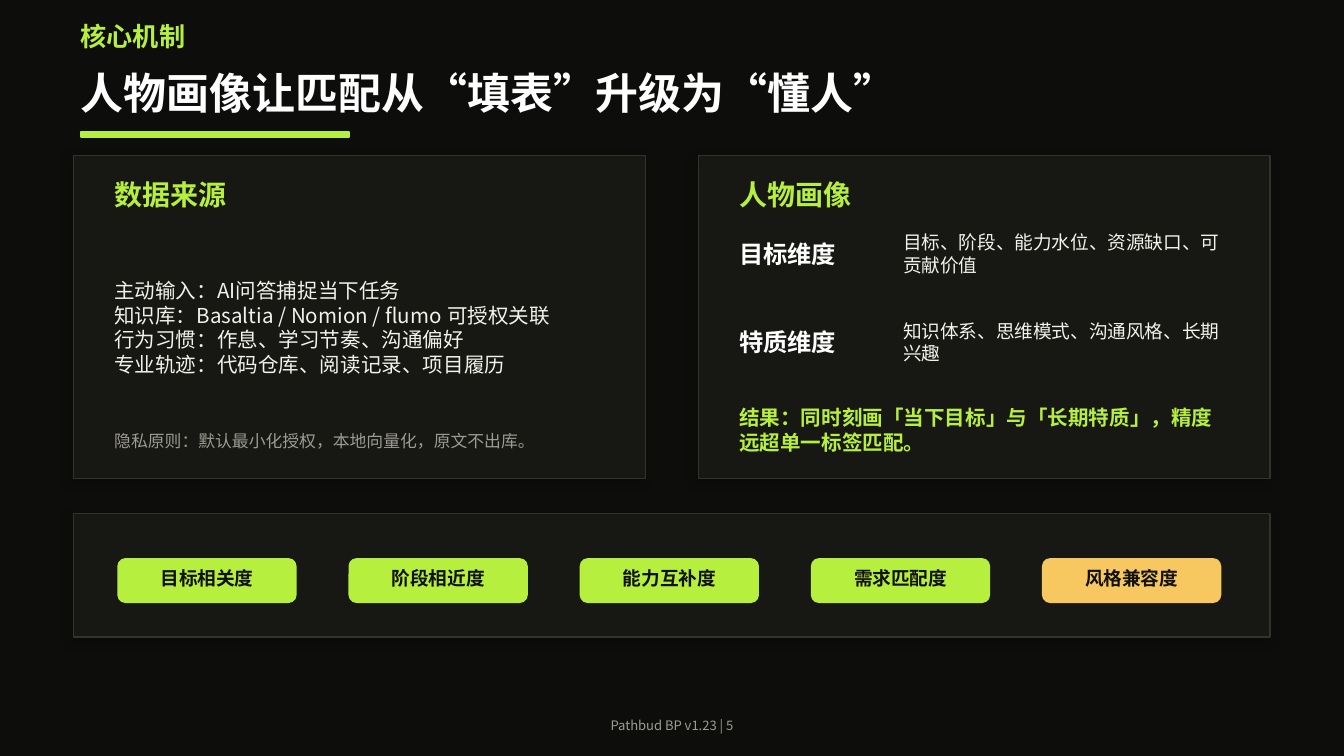
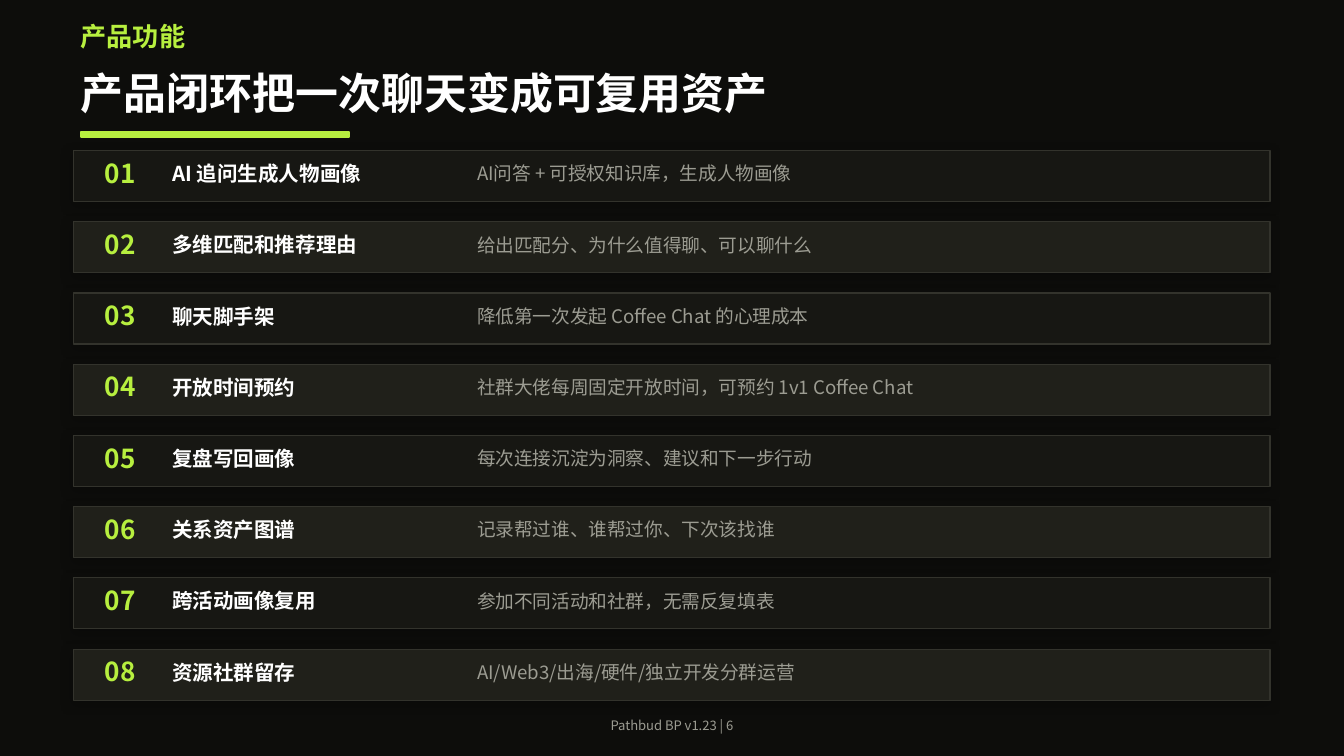
from collections import namedtuple

from lxml import etree
from pptx import Presentation
from pptx import util as u
from pptx.dml import color
from pptx.enum import shapes, text
from pptx.oxml import ns

FONT = "Noto Sans CJK SC"
COLORS = {
    "background": "0D0D0B",
    "panel": "171713",
    "panel_alternate": "20201A",
    "border": "33332C",
    "lime": "B7EF3F",
    "amber": "F6C85F",
    "white": "FFFFFF",
    "body": "F2F2EC",
    "muted": "9C9C92",
    "dark": "111111",
}
Box = namedtuple("Box", "left top width height")
HEADER = Box(0.6, 0.14, 8.8, 0.88)
FOOTER = Box(0.6, 5.32, 8.8, 0.16)

SOURCES = [
    "主动输入：AI问答捕捉当下任务",
    "知识库：Basaltia / Nomion / flumo 可授权关联",
    "行为习惯：作息、学习节奏、沟通偏好",
    "专业轨迹：代码仓库、阅读记录、项目履历",
]
DIMENSIONS = [
    ("目标维度", "目标、阶段、能力水位、资源缺口、可贡献价值"),
    ("特质维度", "知识体系、思维模式、沟通风格、长期兴趣"),
]
SCORES = [
    ("目标相关度", "lime"),
    ("阶段相近度", "lime"),
    ("能力互补度", "lime"),
    ("需求匹配度", "lime"),
    ("风格兼容度", "amber"),
]
FEATURES = [
    ("AI 追问生成人物画像", "AI问答 + 可授权知识库，生成人物画像"),
    ("多维匹配和推荐理由", "给出匹配分、为什么值得聊、可以聊什么"),
    ("聊天脚手架", "降低第一次发起 Coffee Chat 的心理成本"),
    ("开放时间预约", "社群大佬每周固定开放时间，可预约 1v1 Coffee Chat"),
    ("复盘写回画像", "每次连接沉淀为洞察、建议和下一步行动"),
    ("关系资产图谱", "记录帮过谁、谁帮过你、下次该找谁"),
    ("跨活动画像复用", "参加不同活动和社群，无需反复填表"),
    ("资源社群留存", "AI/Web3/出海/硬件/独立开发分群运营"),
]


def rgb(name):
    """Return the named colour."""
    return color.RGBColor.from_string(COLORS[name])


def within(box, left, top, width, height):
    """Return a box placed relative to the corner of another."""
    return Box(round(box.left + left, 2), round(box.top + top, 2), width, height)


def inches(box):
    """Return the four lengths of a box."""
    return [u.Inches(value) for value in box]


def write(shape, content, size, ink, bold=False, align=text.PP_ALIGN.LEFT):
    """Fill a shape with evenly styled text, one paragraph a line."""
    frame = shape.text_frame
    frame.text = content
    frame.word_wrap = True
    frame.auto_size = text.MSO_AUTO_SIZE.NONE
    frame.vertical_anchor = text.MSO_ANCHOR.MIDDLE
    frame.margin_left = frame.margin_right = 0
    frame.margin_top = frame.margin_bottom = 0
    for paragraph in frame.paragraphs:
        paragraph.alignment = align
        if shape.is_placeholder:
            paragraph.space_before = u.Pt(0)
            properties = paragraph._p.get_or_add_pPr()
            properties.set("marL", "0")
            properties.set("indent", "0")
            etree.SubElement(properties, ns.qn("a:buNone"))
        for run in paragraph.runs:
            run.font.size = u.Pt(size)
            run.font.bold = bold
            run.font.color.rgb = rgb(ink)
            run.font.name = FONT
            etree.SubElement(run.font._element, ns.qn("a:ea"), typeface=FONT)


def add_text(slide, box, content, size, ink, **style):
    """Add a text box."""
    write(slide.shapes.add_textbox(*inches(box)), content, size, ink, **style)


def fill_placeholder(placeholder, box, content, size, ink, **style):
    """Move a placeholder and fill it with text."""
    placeholder.left, placeholder.top, placeholder.width, placeholder.height = inches(box)
    write(placeholder, content, size, ink, **style)


def add_block(slide, box, fill, line, width=1, kind=shapes.MSO_SHAPE.RECTANGLE):
    """Add a filled, outlined shape without a shadow."""
    shape = slide.shapes.add_shape(kind, *inches(box))
    shape.shadow.inherit = False
    shape.fill.solid()
    shape.fill.fore_color.rgb = rgb(fill)
    shape.line.color.rgb = rgb(line)
    shape.line.width = u.Pt(width)
    return shape


def add_panel(slide, box, fill="panel"):
    """Add a bordered panel with a soft shadow."""
    panel = add_block(slide, box, fill, "border", 0.6)
    effects = panel._element.spPr.find(ns.qn("a:effectLst"))
    shadow = etree.SubElement(
        effects, ns.qn("a:outerShdw"),
        blurRad=str(u.Pt(6)), dist=str(u.Pt(2)), dir=str(135 * 60000),
        algn="bl", rotWithShape="0",
    )
    shade = etree.SubElement(shadow, ns.qn("a:srgbClr"), val="000000")
    etree.SubElement(shade, ns.qn("a:alpha"), val="20000")


def add_header(slide, box, section, title):
    """Add the section label, the title and its underline."""
    add_text(slide, within(box, 0, 0, box.width, 0.26), section, 14, "lime", bold=True)
    fill_placeholder(slide.shapes.title, within(box, 0, 0.26, box.width, 0.58),
                     title, 23, "white", bold=True)
    add_block(slide, within(box, 0, 0.84, 2, 0.04), "lime", "lime")


def add_footer(slide, box, number):
    """Add the centred footer line."""
    add_text(slide, box, f"Pathbud BP v1.23 | {number}", 7, "muted",
             align=text.PP_ALIGN.CENTER)


def add_card(slide, box, heading):
    """Add a panel with a heading."""
    add_panel(slide, box)
    add_text(slide, within(box, 0.3, 0.16, 3.5, 0.25), heading, 15, "lime", bold=True)


def add_sources(slide, box):
    """Add the card of data sources."""
    add_card(slide, box, "数据来源")
    body = slide.placeholders[1]
    fill_placeholder(body, within(box, 0.3, 0.6, 3.55, 1.35), "\n".join(SOURCES), 11, "body")
    slide.shapes._spTree.append(body._element)
    add_text(slide, within(box, 0.3, 2.01, 3.55, 0.22),
             "隐私原则：默认最小化授权，本地向量化，原文不出库。", 9, "muted")


def add_profile(slide, box):
    """Add the card of profile dimensions."""
    add_card(slide, box, "人物画像")
    for index, (name, details) in enumerate(DIMENSIONS):
        top = 0.6 + 0.66 * index
        add_text(slide, within(box, 0.3, top, 1.2, 0.25), name, 13, "white", bold=True)
        add_text(slide, within(box, 1.52, top, 2.4, 0.25), details, 10, "body")
    add_text(slide, within(box, 0.3, 1.9, 3.55, 0.28),
             "结果：同时刻画「当下目标」与「长期特质」，精度远超单一标签匹配。",
             11, "lime", bold=True)


def add_scores(slide, box):
    """Add the panel with a row of score chips."""
    add_panel(slide, box)
    for index, (label, fill) in enumerate(SCORES):
        chip = within(box, 0.33 + 1.72 * index, 0.34, 1.32, 0.32)
        add_block(slide, chip, fill, fill, kind=shapes.MSO_SHAPE.ROUNDED_RECTANGLE)
        add_text(slide, within(chip, 0, 0.04, chip.width, 0.2), label, 10, "dark",
                 bold=True, align=text.PP_ALIGN.CENTER)


def add_feature(slide, box, number, name, details):
    """Add one numbered feature row."""
    add_panel(slide, box, "panel" if number % 2 else "panel_alternate")
    add_text(slide, within(box, 0.23, 0.04, 0.42, 0.25), f"{number:02}", 14, "lime", bold=True)
    add_text(slide, within(box, 0.73, 0.06, 2.15, 0.22), name, 11, "white", bold=True)
    add_text(slide, within(box, 3, 0.06, 5.55, 0.22), details, 10, "muted")


def build_mechanism(presentation):
    """Build the slide on the core mechanism."""
    slide = presentation.slides.add_slide(presentation.slide_layouts[1])
    add_header(slide, HEADER, "核心机制", "人物画像让匹配从“填表”升级为“懂人”")
    add_sources(slide, Box(0.55, 1.16, 4.25, 2.4))
    add_profile(slide, Box(5.2, 1.16, 4.25, 2.4))
    add_scores(slide, Box(0.55, 3.82, 8.9, 0.92))
    add_footer(slide, FOOTER, 5)


def build_features(presentation):
    """Build the slide on product features."""
    slide = presentation.slides.add_slide(presentation.slide_layouts[5])
    add_header(slide, HEADER, "产品功能", "产品闭环把一次聊天变成可复用资产")
    first_row = Box(0.55, 1.12, 8.9, 0.38)
    for index, (name, details) in enumerate(FEATURES):
        row = within(first_row, 0, 0.53 * index, first_row.width, first_row.height)
        add_feature(slide, row, index + 1, name, details)
    add_footer(slide, FOOTER, 6)


def main():
    """Build and save the presentation."""
    presentation = Presentation()
    presentation.slide_width = u.Inches(10)
    presentation.slide_height = u.Inches(10 * 9 / 16)
    background = presentation.slide_master.background.fill
    background.solid()
    background.fore_color.rgb = rgb("background")
    build_mechanism(presentation)
    build_features(presentation)
    presentation.save("out.pptx")


if __name__ == "__main__":
    main()
